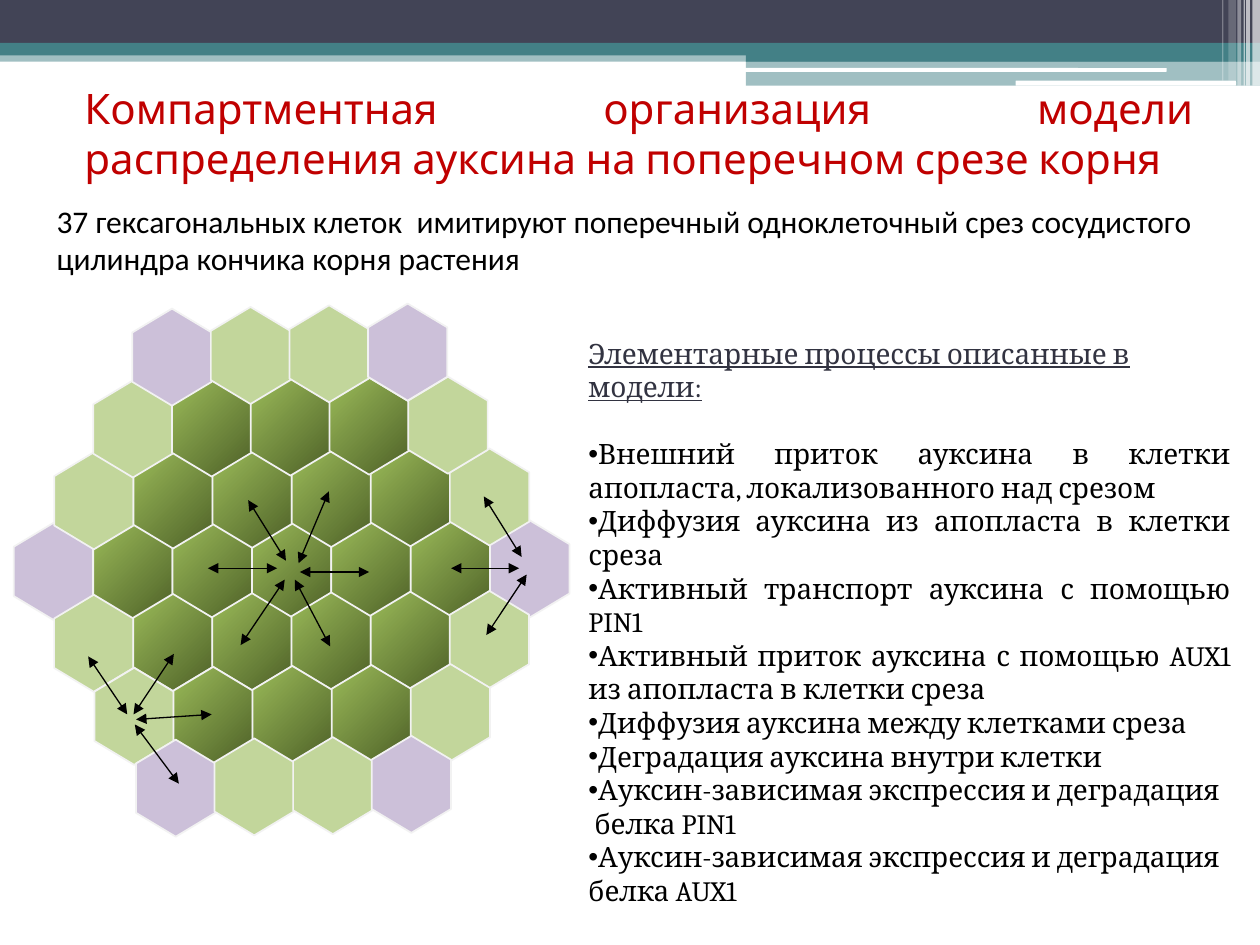
from lxml.etree import SubElement
from pptx import Presentation
from pptx.dml.color import RGBColor
from pptx.enum.shapes import MSO_CONNECTOR, MSO_SHAPE as Shape
from pptx.enum.text import MSO_ANCHOR as Anchor, MSO_AUTO_SIZE as AutoSize, PP_ALIGN as Align
from pptx.oxml.ns import qn
from pptx.util import Inches, Pt

DARK, TEAL, WHITE, BLACK = "424456", "438086", "FFFFFF", "000000"
OUTER, CORNER, INNER = "C2D69B", "CCC0D9", ("9BBB59", "4E6128")
CELL_LENGTH, CELL_WIDTH = 0.77, 0.63

# left, top, width, height, colour, opacity in percent
BANDS = [
    (0, 0.4, 10, 0.09, TEAL, 50),
    (0, 0, 10, 0.34, DARK, 100),
    (0, 0.34, 10, 0.1, TEAL, 100),
    (5.92, 0.39, 4.08, 0.1, TEAL, 100),
    (5.92, 0.48, 4.08, 0.2, TEAL, 50),
]
ROUNDED_BANDS = [(5.91, 0.54, 3.35, 0.03), (8.06, 0.64, 1.75, 0.04)]
# left, width, height, opacity in percent
STRIPES = [
    (9.94, 0.06, 0.68, 65),
    (9.89, 0.03, 0.68, 65),
    (9.87, 0.01, 0.68, 60),
    (9.82, 0.03, 0.68, 40),
    (9.75, 0.06, 0.64, 20),
    (9.7, 0.01, 0.64, 30),
]
# cell count, then left and top of the first and of the last cell
CELL_ROWS = [
    (4, 0.98, 2.52, 2.85, 2.48),
    (5, 0.67, 3.09, 3.17, 3.06),
    (6, 0.36, 3.66, 3.5, 3.63),
    (7, 0.04, 4.22, 3.82, 4.2),
    (6, 0.36, 4.79, 3.5, 4.76),
    (5, 0.68, 5.37, 3.19, 5.34),
    (4, 1.01, 5.94, 2.88, 5.91),
]
FLOWS = [
    (3.84, 3.94, 4.14, 4.42),
    (3.86, 5.04, 4.18, 4.56),
    (3.58, 4.51, 4.12, 4.51),
    (1.06, 5.67, 1.38, 5.19),
    (1.42, 6.22, 1.07, 5.75),
    (1.08, 5.71, 1.68, 5.67),
    (1.01, 5.67, 0.7, 5.21),
    (1.65, 4.51, 2.2, 4.51),
    (2.38, 4.54, 2.93, 4.54),
    (1.97, 3.97, 2.27, 4.45),
    (2.61, 3.9, 2.37, 4.47),
    (2.26, 4.6, 1.91, 5.12),
    (2.34, 4.6, 2.62, 5.13),
]
TITLE = "Компартментная организация модели распределения ауксина на поперечном срезе корня"
SUMMARY = ("37 гексагональных клеток  имитируют поперечный одноклеточный срез "
           "сосудистого цилиндра кончика корня растения")
HEADING = "Элементарные процессы описанные в модели:"
# text, bulleted
PROCESSES = [
    ("Внешний приток ауксина в клетки апопласта, локализованного над срезом", True),
    ("Диффузия ауксина из апопласта в клетки среза", True),
    ("Активный транспорт ауксина с помощью PIN1", True),
    ("Активный приток ауксина с помощью AUX1 из апопласта в клетки среза", True),
    ("Диффузия ауксина между клетками среза", True),
    ("Деградация ауксина внутри клетки", True),
    ("Ауксин-зависимая экспрессия и деградация", True),
    (" белка PIN1", False),
    ("Ауксин-зависимая экспрессия и деградация", True),
    ("белка AUX1", False),
]


def rgb(colour):
    """Turn a hex string into a colour."""
    return RGBColor.from_string(colour)


def add_band(slide, left, top, width, height, colour, opacity=100, kind=Shape.RECTANGLE):
    """Add a borderless strip of the header decoration."""
    band = slide.shapes.add_shape(kind, Inches(left), Inches(top), Inches(width), Inches(height))
    band.shadow.inherit = False
    band.line.fill.background()
    band.fill.solid()
    band.fill.fore_color.rgb = rgb(colour)
    if opacity < 100:
        tint = band._element.spPr.find(qn("a:solidFill")).find(qn("a:srgbClr"))
        SubElement(tint, qn("a:alpha")).set("val", str(opacity * 1000))


def add_header(slide):
    """Add the bands and stripes along the top edge."""
    for band in BANDS:
        add_band(slide, *band)
    for place in ROUNDED_BANDS:
        add_band(slide, *place, WHITE, kind=Shape.ROUNDED_RECTANGLE)
    for left, width, height, opacity in STRIPES:
        add_band(slide, left, 0, width, height, WHITE, opacity)


def place_text(holder, left, top, width, height, anchor=Anchor.TOP):
    """Position a text holder and return its wrapped text frame."""
    holder.left, holder.top = Inches(left), Inches(top)
    holder.width, holder.height = Inches(width), Inches(height)
    frame = holder.text_frame
    frame.word_wrap = True
    frame.auto_size = AutoSize.NONE
    frame.vertical_anchor = anchor
    return frame


def write(paragraph, text, font, size, colour, align=Align.JUSTIFY, underline=False):
    """Add one formatted run to a paragraph."""
    paragraph.alignment = align
    paragraph.space_before = Pt(0)
    run = paragraph.add_run()
    run.text = text
    run.font.name, run.font.size = font, Pt(size)
    run.font.color.rgb = rgb(colour)
    run.font.underline = underline


def set_bullet(paragraph, bulleted):
    """Set a flush paragraph with or without a round bullet."""
    properties = paragraph._p.get_or_add_pPr()
    properties.set("marL", "0")
    properties.set("indent", "0")
    if bulleted:
        SubElement(properties, qn("a:buFont")).set("typeface", "Arial")
        SubElement(properties, qn("a:buChar")).set("char", "•")
    else:
        SubElement(properties, qn("a:buNone"))


def add_processes(body):
    """Fill the body placeholder with the heading and the process list."""
    frame = place_text(body, 4.57, 2.62, 5.3, 3.87)
    heading = frame.paragraphs[0]
    write(heading, HEADING, "Cambria", 16, "323341", Align.LEFT, True)
    heading.space_after = Pt(19)
    set_bullet(heading, False)
    for text, bulleted in PROCESSES:
        process = frame.add_paragraph()
        write(process, text, "Cambria", 16, BLACK)
        set_bullet(process, bulleted)


def add_cell(group, left, top, colours, rotation):
    """Add one upright hexagonal cell, plain or with a gradient."""
    cell = group.shapes.add_shape(Shape.HEXAGON, Inches(left), Inches(top),
                                  Inches(CELL_LENGTH), Inches(CELL_WIDTH))
    cell.adjustments[0] = 0.3
    cell.rotation = rotation
    cell.shadow.inherit = False
    cell.line.color.rgb = rgb("F2F2F2")
    cell.line.width = Pt(1)
    if isinstance(colours, str):
        cell.fill.solid()
        cell.fill.fore_color.rgb = rgb(colours)
        return
    cell.fill.gradient()
    cell.fill.gradient_angle = 315
    for stop, colour in zip(cell.fill.gradient_stops, colours):
        stop.color.rgb = rgb(colour)
    cell._element.spPr.find(qn("a:gradFill")).set("rotWithShape", "0")


def add_cells(group):
    """Add the hexagonal section with its corner, outer and inner cells."""
    last_row = len(CELL_ROWS) - 1
    middle = last_row // 2
    for row in [*range(middle, last_row + 1), *reversed(range(middle))]:
        count, left, top, last_left, last_top = CELL_ROWS[row]
        for column in range(count):
            at_end = column in (0, count - 1)
            if at_end and row in (0, middle, last_row):
                colours = CORNER
            else:
                colours = OUTER if at_end or row in (0, last_row) else INNER
            share = column / (count - 1)
            add_cell(group, left + share * (last_left - left), top + share * (last_top - top),
                     colours, 90 if row < middle else 270)


def add_flow(group, *ends):
    """Add a thin arrow pointing both ways."""
    flow = group.shapes.add_connector(MSO_CONNECTOR.STRAIGHT, *map(Inches, ends))
    flow.line.color.rgb = rgb(BLACK)
    flow.line.width = Pt(0.75)
    outline = flow.line._get_or_add_ln()
    for end in ("a:headEnd", "a:tailEnd"):
        SubElement(outline, qn(end)).set("type", "triangle")
    SubElement(flow._element.spPr, qn("a:effectLst"))


def main():
    """Build the slide and save it."""
    deck = Presentation()
    deck.slide_width, deck.slide_height = Inches(10), Inches(7.5)
    slide = deck.slides.add_slide(deck.slide_layouts[1])
    add_header(slide)
    title = place_text(slide.shapes.title, 0.57, 0.43, 9, 1.25, Anchor.MIDDLE)
    write(title.paragraphs[0], TITLE, "Cabin", 24, "C00000")
    add_processes(slide.placeholders[1])
    summary = place_text(slide.shapes.add_textbox(0, 0, 0, 0), 0.35, 1.55, 9.21, 0.71)
    write(summary.paragraphs[0], SUMMARY, "Calibri", 18, BLACK)
    section = slide.shapes.add_group_shape()
    add_cells(section)
    for ends in FLOWS:
        add_flow(section, *ends)
    deck.save("out.pptx")


if __name__ == "__main__":
    main()
